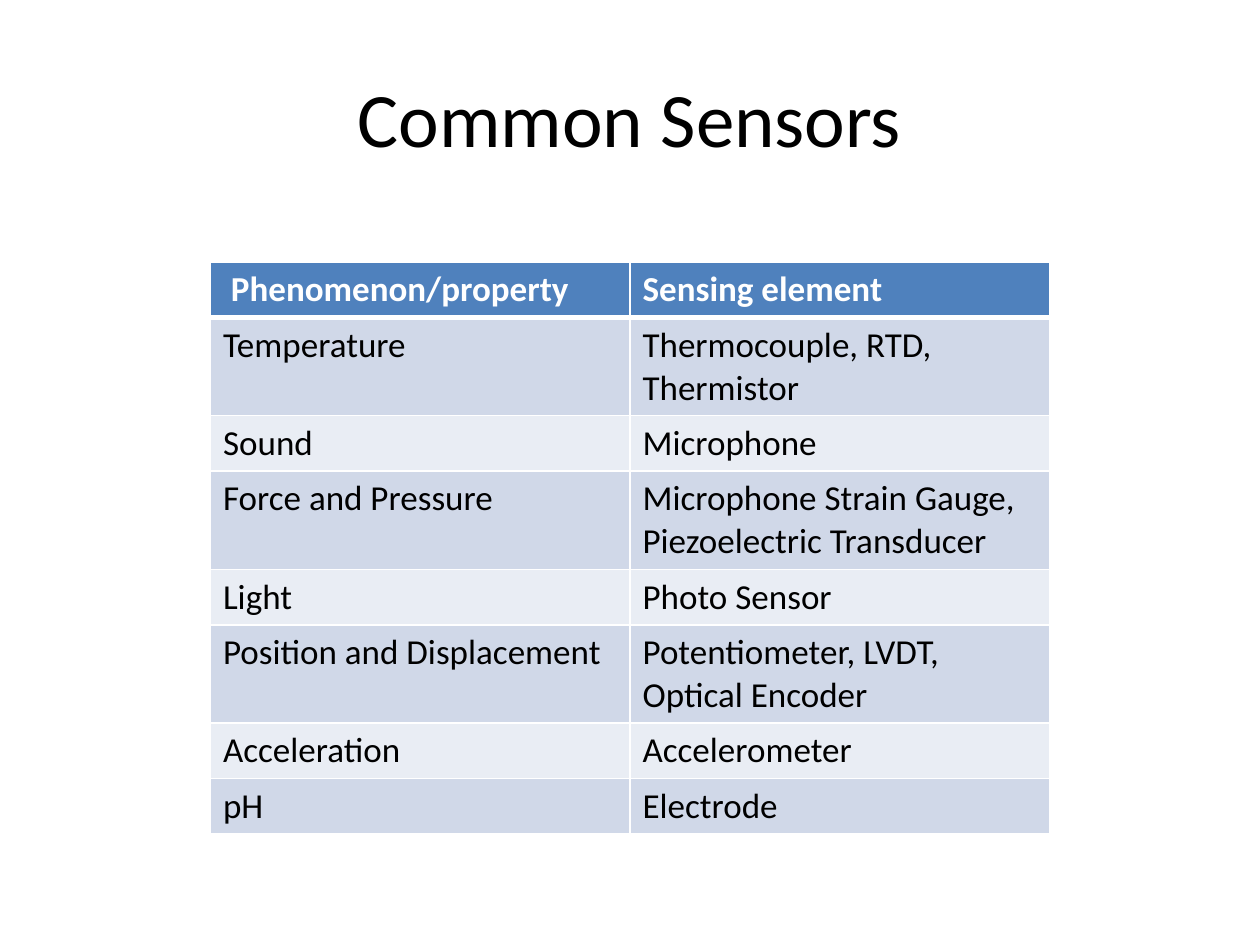
import pptx
import pptx.util
import pptx.dml.color
import pptx.enum.text
import pptx.oxml.ns
import lxml.etree

Inches = pptx.util.Inches
Pt = pptx.util.Pt

COLORS = {
    "heading": "4F81BD",
    "odd": "D0D8E8",
    "even": "E9EDF4",
    "white": "FFFFFF",
    "black": "000000",
}
SENSORS = [
    (" Phenomenon/property", "Sensing element"),
    ("Temperature", "Thermocouple, RTD, Thermistor"),
    ("Sound", "Microphone"),
    ("Force and Pressure", "Microphone Strain Gauge, Piezoelectric Transducer"),
    ("Light", "Photo Sensor"),
    ("Position and Displacement", "Potentiometer, LVDT, Optical Encoder"),
    ("Acceleration", "Accelerometer"),
    ("pH", "Electrode"),
]
TWO_LINE_ROWS = (1, 3, 5)


def add_run(paragraph, text, size, color, bold=False):
    run = paragraph.add_run()
    run.text = text
    run.font.name = "Calibri"
    run.font.size = Pt(size)
    run.font.bold = bold
    run.font.color.rgb = pptx.dml.color.RGBColor.from_string(COLORS[color])


def add_border(cell, side, width):
    qn = pptx.oxml.ns.qn
    properties = cell._tc.get_or_add_tcPr()
    line = lxml.etree.SubElement(properties, qn("a:ln" + side), w=str(Pt(width)))
    fill = lxml.etree.SubElement(line, qn("a:solidFill"))
    lxml.etree.SubElement(fill, qn("a:srgbClr"), val=COLORS["white"])


deck = pptx.Presentation()
deck.slide_width = Inches(10)
deck.slide_height = Inches(7.5)
slide = deck.slides.add_slide(deck.slide_layouts[6])

title = slide.shapes.add_textbox(Inches(0.5), Inches(0.3), Inches(9), Inches(1.25)).text_frame
title.word_wrap = True
title.vertical_anchor = pptx.enum.text.MSO_ANCHOR.MIDDLE
title.paragraphs[0].alignment = pptx.enum.text.PP_ALIGN.CENTER
add_run(title.paragraphs[0], "Common Sensors", 44, "black")

sensor_table = slide.shapes.add_table(
    len(SENSORS), 2, Inches(1.67), Inches(2.08), Inches(6.66), Inches(4.54)
).table
for column in sensor_table.columns:
    column.width = Inches(3.33)

for row, entries in enumerate(SENSORS):
    sensor_table.rows[row].height = Inches(0.78 if row in TWO_LINE_ROWS else 0.44)
    heading = row == 0
    band = "heading" if heading else "odd" if row % 2 else "even"
    for column, entry in enumerate(entries):
        cell = sensor_table.cell(row, column)
        for side in "LRTB":
            heading_edge = (row, side) in ((0, "B"), (1, "T"))
            add_border(cell, side, 3 if heading_edge else 1)
        cell.fill.solid()
        cell.fill.fore_color.rgb = pptx.dml.color.RGBColor.from_string(COLORS[band])
        add_run(cell.text_frame.paragraphs[0], entry, 20, "white" if heading else "black", heading)

deck.save("out.pptx")
